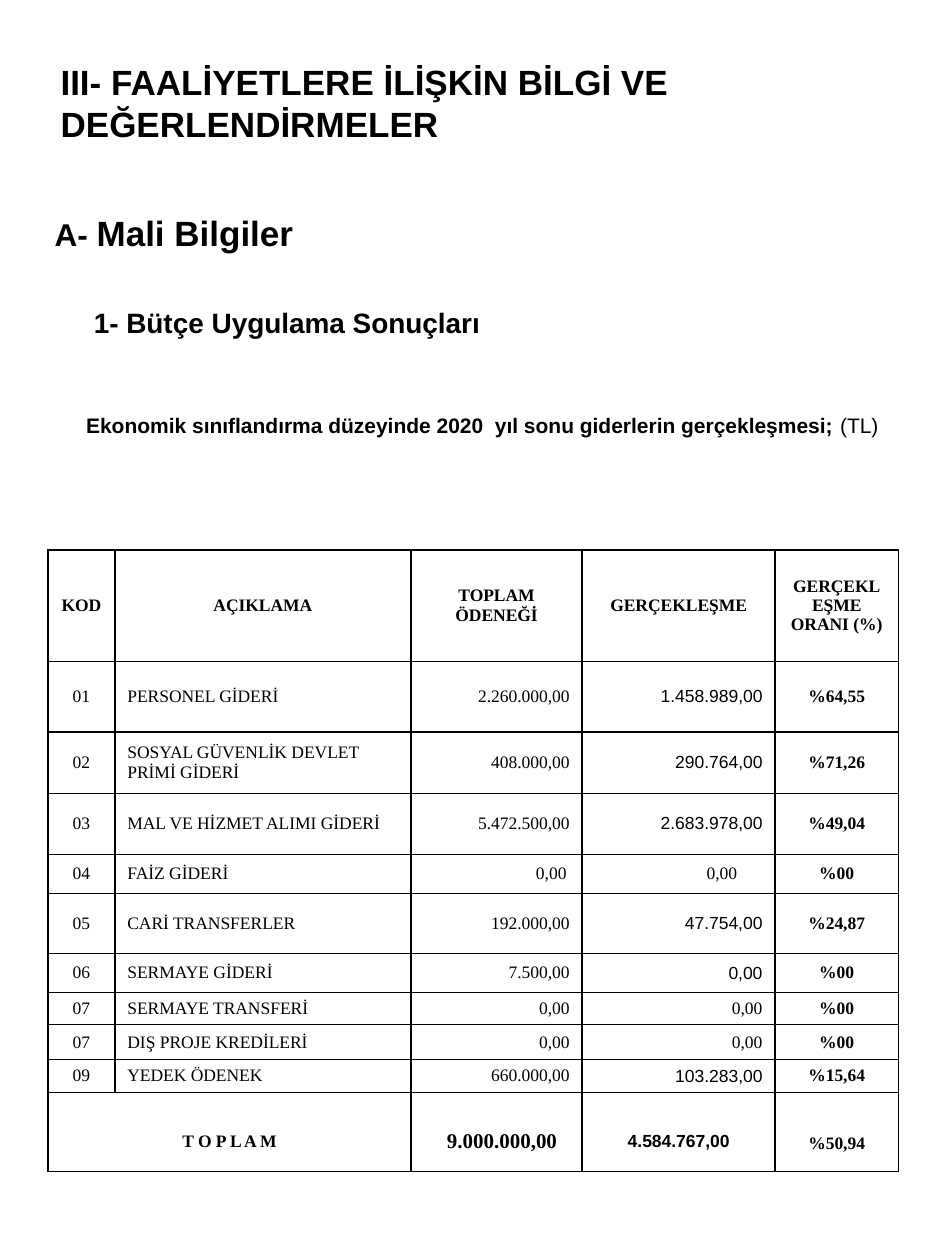
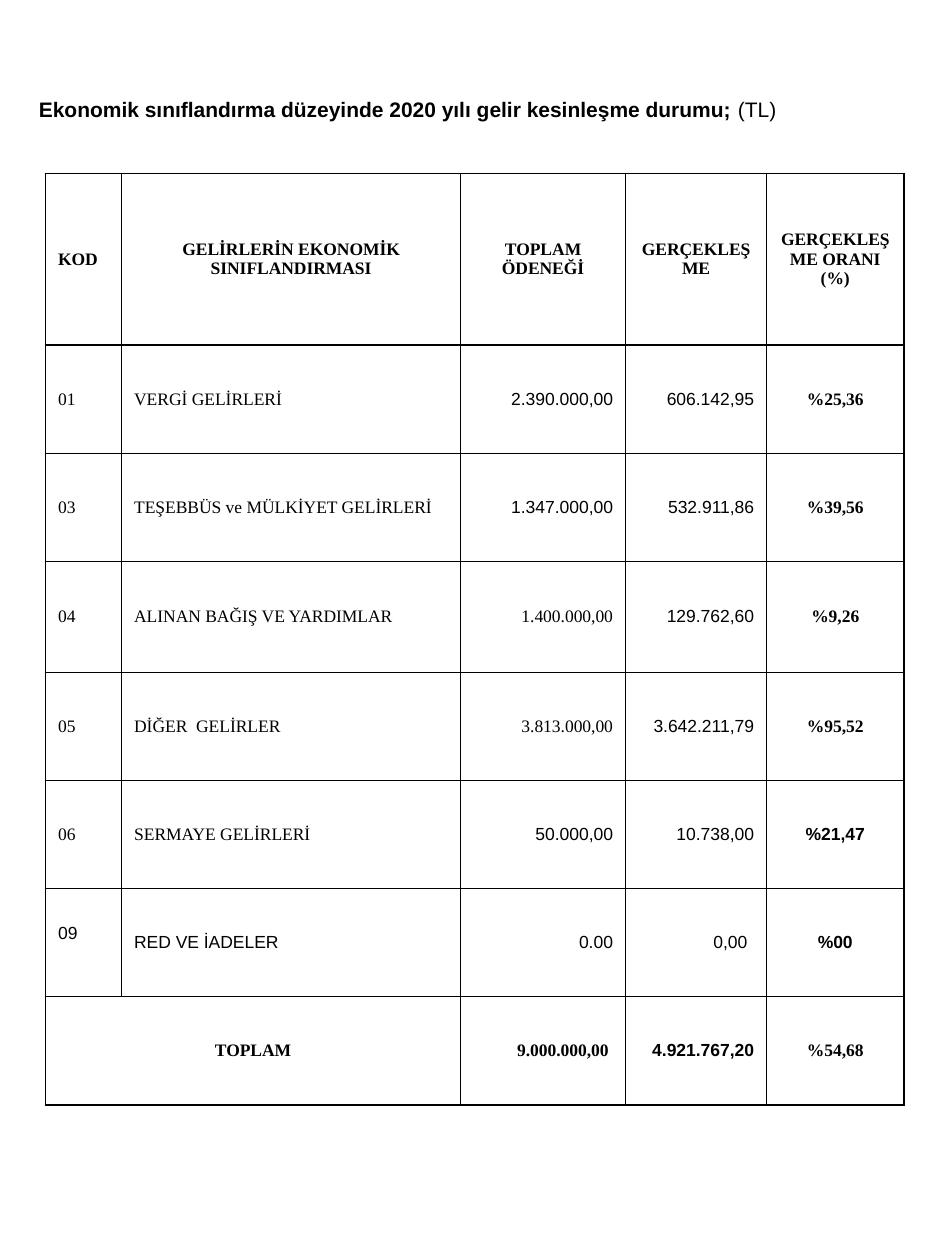
from lxml import etree
from pptx import Presentation
from pptx.dml.color import RGBColor
from pptx.enum.text import MSO_ANCHOR, MSO_AUTO_SIZE, PP_ALIGN
from pptx.oxml.ns import qn
from pptx.util import Pt

BLACK = RGBColor(0x00, 0x00, 0x00)
SANS, SERIF = "Arial", "Times New Roman"
LEFT, CENTER, RIGHT = PP_ALIGN.LEFT, PP_ALIGN.CENTER, PP_ALIGN.RIGHT
PAGE_WIDTH, PAGE_HEIGHT = 540, 720
BODY_LEFT = 15
SIDE_MARGIN, EDGE_MARGIN = 7.2, 2

# Content: headings as (runs, indent, space before), a run as (text, size, bold)
REPORT_TITLE = "III- FAALİYETLERE İLİŞKİN BİLGİ VE DEĞERLENDİRMELER"
EXPENSE_HEADINGS = [
    ([("A- ", 18, True), ("Mali Bilgiler", 20, True)], 9, 0),
    ([("1- Bütçe Uygulama Sonuçları", 16, True)], 31.4, 29.7),
    ([("Ekonomik sınıflandırma düzeyinde 2020  yıl sonu giderlerin gerçekleşmesi;",
       12, True), (" (TL)", 12, False)], 27, 41.7),
]
INCOME_HEADINGS = [
    ([("Ekonomik sınıflandırma düzeyinde 2020 yılı gelir kesinleşme durumu;",
       12, True), (" (TL)", 12, False)], 0, 0),
]

# Content: tables; "sans" and "special" are keyed by (row, column)
EXPENSES = dict(
    left=27.4, top=314.4,
    columns=[38.2, 169.2, 97.9, 110.2, 70.5],
    heights=[63.5, 40.5, 35, 35, 22.3, 34.2, 22.5, 18.3, 20, 18.7, 45.3],
    code_align=CENTER,
    rows=[
        ("KOD", "AÇIKLAMA", "TOPLAM ÖDENEĞİ", "GERÇEKLEŞME", "GERÇEKLEŞME ORANI (%)"),
        ("01", "PERSONEL GİDERİ", "2.260.000,00", "1.458.989,00", "%64,55"),
        ("02", "SOSYAL GÜVENLİK DEVLET PRİMİ GİDERİ", "408.000,00", "290.764,00", "%71,26"),
        ("03", "MAL VE HİZMET ALIMI GİDERİ", "5.472.500,00", "2.683.978,00", "%49,04"),
        ("04", "FAİZ GİDERİ", "0,00", "0,00", "%00"),
        ("05", "CARİ TRANSFERLER", "192.000,00", "47.754,00", "%24,87"),
        ("06", "SERMAYE GİDERİ", "7.500,00", "0,00", "%00"),
        ("07", "SERMAYE TRANSFERİ", "0,00", "0,00", "%00"),
        ("07", "DIŞ PROJE KREDİLERİ", "0,00", "0,00", "%00"),
        ("09", "YEDEK ÖDENEK", "660.000,00", "103.283,00", "%15,64"),
        ("T O P L A M", "", "9.000.000,00", "4.584.767,00", "%50,94"),
    ],
    sans={(row, 3) for row in (1, 2, 3, 5, 6, 9, 10)},
    special={
        (4, 2): dict(right=9), (4, 3): dict(right=21.7),
        (10, 0): dict(top=13), (10, 2): dict(top=13, right=14.3, size=12),
        (10, 3): dict(top=13, align=CENTER), (10, 4): dict(top=15),
    },
)
INCOME = dict(
    left=26, top=99,
    columns=[43.5, 193.7, 94.3, 80.6, 78.5],
    heights=[98.2, 61.8, 61.8, 63.4, 61.8, 61.8, 61.8, 61.8],
    code_align=LEFT,
    rows=[
        ("KOD", "GELİRLERİN EKONOMİK SINIFLANDIRMASI", "TOPLAM ÖDENEĞİ",
         "GERÇEKLEŞME", "GERÇEKLEŞME ORANI (%)"),
        ("01", "VERGİ GELİRLERİ", "2.390.000,00", "606.142,95", "%25,36"),
        ("03", "TEŞEBBÜS ve MÜLKİYET GELİRLERİ", "1.347.000,00", "532.911,86", "%39,56"),
        ("04", "ALINAN BAĞIŞ VE YARDIMLAR", "1.400.000,00", "129.762,60", "%9,26"),
        ("05", "DİĞER  GELİRLER", "3.813.000,00", "3.642.211,79", "%95,52"),
        ("06", "SERMAYE GELİRLERİ", "50.000,00", "10.738,00", "%21,47"),
        ("09", "RED VE İADELER", "0.00", "0,00", "%00"),
        ("TOPLAM", "", "9.000.000,00", "4.921.767,20", "%54,68"),
    ],
    sans={(row, 3) for row in range(1, 8)} | {(6, column) for column in range(5)}
         | {(1, 2), (2, 2), (5, 2), (5, 4)},
    special={
        (6, 0): dict(bottom=13), (6, 3): dict(right=11), (7, 2): dict(right=9.7),
    },
)


def write(paragraph, text, *, size=10, font=SERIF, bold=False, align=LEFT):
    """Add one formatted run to a paragraph."""
    paragraph.alignment = align
    run = paragraph.add_run()
    run.text = text
    run.font.name, run.font.size, run.font.bold = font, Pt(size), bold
    run.font.color.rgb = BLACK


def place(shape, left, top, width, height):
    shape.left, shape.top = Pt(left), Pt(top)
    shape.width, shape.height = Pt(width), Pt(height)
    shape.text_frame.word_wrap = True
    shape.text_frame.auto_size = MSO_AUTO_SIZE.NONE


def add_headings(body, headings, top, height, inset):
    place(body, BODY_LEFT, top, PAGE_WIDTH - BODY_LEFT, height)
    frame = body.text_frame
    frame.margin_top = Pt(inset)
    frame.vertical_anchor = MSO_ANCHOR.TOP
    for index, (runs, indent, space) in enumerate(headings):
        paragraph = frame.add_paragraph() if index else frame.paragraphs[0]
        paragraph.space_before = Pt(space)
        for text, size, bold in runs:
            write(paragraph, text, size=size, font=SANS, bold=bold)
        properties = paragraph._p.get_or_add_pPr()
        properties.set("marL", str(Pt(indent)))
        properties.set("indent", "0")
        etree.SubElement(properties, qn("a:buNone"))


def add_borders(cell):
    properties = cell._tc.get_or_add_tcPr()
    for side in ("a:lnL", "a:lnR", "a:lnT", "a:lnB"):
        line = etree.SubElement(properties, qn(side), w=str(Pt(1)))
        fill = etree.SubElement(line, qn("a:solidFill"))
        etree.SubElement(fill, qn("a:srgbClr"), val=str(BLACK))
    cell.fill.background()


def add_budget_table(slide, budget):
    rows, columns, heights = budget["rows"], budget["columns"], budget["heights"]
    table = slide.shapes.add_table(
        len(rows), len(columns), Pt(budget["left"]), Pt(budget["top"]),
        Pt(sum(columns)), Pt(sum(heights))).table
    table.first_row = table.horz_banding = False
    for column, width in zip(table.columns, columns):
        column.width = Pt(width)
    for row, height in zip(table.rows, heights):
        row.height = Pt(height)

    total = len(rows) - 1
    table.cell(total, 0).merge(table.cell(total, 1))
    column_aligns = [budget["code_align"], LEFT, RIGHT, RIGHT, CENTER]
    for r, row in enumerate(rows):
        for c, text in enumerate(row):
            cell = table.cell(r, c)
            add_borders(cell)
            special = budget["special"].get((r, c), {})
            cell.vertical_anchor = MSO_ANCHOR.MIDDLE
            cell.margin_left = Pt(SIDE_MARGIN)
            cell.margin_right = Pt(special.get("right", SIDE_MARGIN))
            cell.margin_top = Pt(special.get("top", EDGE_MARGIN))
            cell.margin_bottom = Pt(special.get("bottom", EDGE_MARGIN))
            if cell.is_spanned:
                continue
            align = column_aligns[c]
            if (r == 0 and c > 0) or (r == total and c == 0):
                align = CENTER
            write(cell.text_frame.paragraphs[0], text,
                  size=special.get("size", 10),
                  font=SANS if (r, c) in budget["sans"] else SERIF,
                  bold=r in (0, total) or c == 4,
                  align=special.get("align", align))


def main():
    deck = Presentation()
    deck.slide_width, deck.slide_height = Pt(PAGE_WIDTH), Pt(PAGE_HEIGHT)
    layout = deck.slide_layouts[1]

    # Expenses
    expense_slide = deck.slides.add_slide(layout)
    title = expense_slide.shapes.title
    place(title, 27.4, 29, PAGE_WIDTH - 27.4, 59)
    title.text_frame.vertical_anchor = MSO_ANCHOR.MIDDLE
    write(title.text_frame.paragraphs[0], REPORT_TITLE, size=20, font=SANS, bold=True)
    add_headings(expense_slide.placeholders[1], EXPENSE_HEADINGS, 116, 584, 5)
    add_budget_table(expense_slide, EXPENSES)

    # Income, which has no title
    income_slide = deck.slides.add_slide(layout)
    unused = income_slide.shapes.title._element
    unused.getparent().remove(unused)
    add_headings(income_slide.placeholders[1], INCOME_HEADINGS, 31, 629, 24.4)
    add_budget_table(income_slide, INCOME)

    deck.save("out.pptx")


if __name__ == "__main__":
    main()
